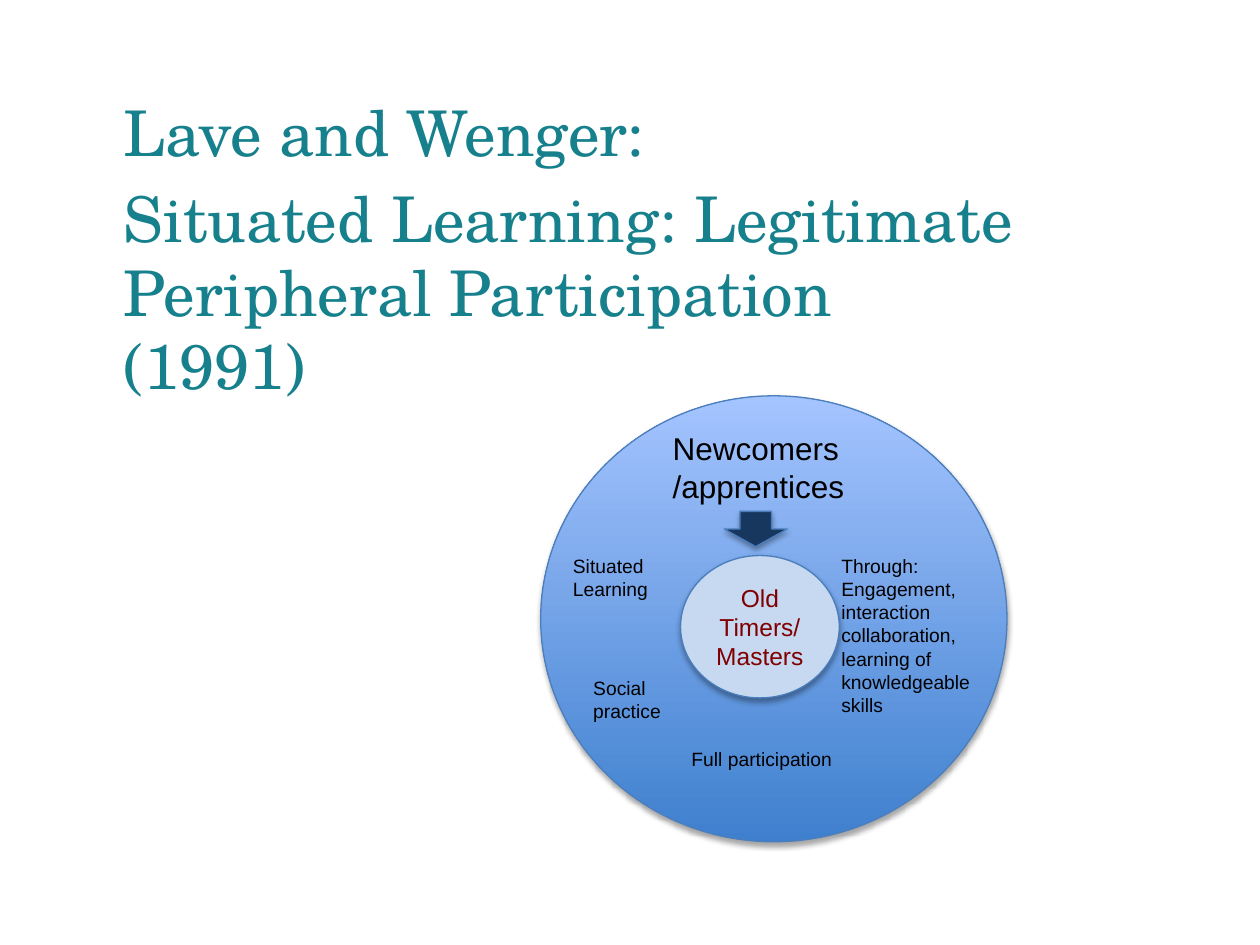
"""Build a slide on situated learning with a diagram of peripheral participation."""
from dataclasses import dataclass

import lxml.etree
import pptx
import pptx.dml.color
import pptx.enum.shapes
import pptx.enum.text
import pptx.oxml.ns
import pptx.util

Cm = pptx.util.Cm
RGBColor = pptx.dml.color.RGBColor
Geometry = pptx.enum.shapes.MSO_SHAPE
Align = pptx.enum.text.PP_ALIGN
Anchor = pptx.enum.text.MSO_ANCHOR
AutoSize = pptx.enum.text.MSO_AUTO_SIZE

TEAL = RGBColor(0x16, 0x81, 0x8D)
DEEP_BLUE = RGBColor(0x3F, 0x80, 0xCE)
LIGHT_BLUE = RGBColor(0xA4, 0xC4, 0xFF)
PALE_BLUE = RGBColor(0xC6, 0xD9, 0xF1)
NAVY = RGBColor(0x17, 0x37, 0x5E)
OUTLINE = RGBColor(0x4B, 0x7E, 0xBC)
MAROON = RGBColor(0x80, 0x00, 0x00)
BLACK = RGBColor(0x00, 0x00, 0x00)


@dataclass(frozen=True)
class Box:
    left: float
    top: float
    width: float
    height: float

    def lengths(self) -> tuple:
        return Cm(self.left), Cm(self.top), Cm(self.width), Cm(self.height)


@dataclass(frozen=True)
class Label:
    text: str
    box: Box
    size: int = 11


@dataclass(frozen=True)
class Figure:
    geometry: Geometry
    box: Box
    colors: tuple
    text: str = ""


TITLE = "Lave and Wenger:\nSituated Learning: Legitimate Peripheral Participation (1991)"
TITLE_BOX = Box(2.49, 1.93, 18.11, 1.8)

FIGURES = (
    Figure(Geometry.OVAL, Box(10.9, 7.98, 9.4, 8.99), (DEEP_BLUE, LIGHT_BLUE)),
    Figure(Geometry.OVAL, Box(13.72, 11.2, 3.2, 2.87), (PALE_BLUE,), "Old Timers/\nMasters"),
    Figure(Geometry.DOWN_ARROW, Box(14.6, 10.31, 1.27, 0.71), (NAVY,)),
)

LABELS = (
    Label("Newcomers/apprentices", Box(13.31, 8.53, 3.99, 1.8), 18),
    Label(
        "Through:\nEngagement, interaction collaboration, learning of knowledgeable skills",
        Box(16.71, 11.05, 3.18, 3.56),
    ),
    Label("Full participation", Box(13.69, 14.94, 4.29, 0.74)),
    Label("Social practice", Box(11.71, 13.51, 2.21, 1.19)),
    Label("Situated Learning", Box(11.3, 11.05, 2.39, 1.19)),
)


def write_text(frame, text: str, *, size: float, color: RGBColor = BLACK, font: str = "Arial",
               align=Align.LEFT, anchor=Anchor.TOP, auto_size=AutoSize.NONE,
               line_spacing: float = 0, space_before: float = 0) -> None:
    frame.word_wrap = True
    frame.auto_size = auto_size
    frame.vertical_anchor = anchor
    frame.text = text
    for index, paragraph in enumerate(frame.paragraphs):
        paragraph.alignment = align
        if line_spacing:
            paragraph.line_spacing = pptx.util.Pt(line_spacing)
        if index and space_before:
            paragraph.space_before = pptx.util.Pt(space_before)
        for run in paragraph.runs:
            run.font.name = font
            run.font.size = pptx.util.Pt(size)
            run.font.color.rgb = color


def add_soft_shadow(shape) -> None:
    shape.shadow.inherit = False
    qn = pptx.oxml.ns.qn
    effects = shape.element.spPr.find(qn("a:effectLst"))
    shadow = lxml.etree.SubElement(effects, qn("a:outerShdw"), blurRad="40000",
                                   dist="23000", dir="5400000", rotWithShape="0")
    shade = lxml.etree.SubElement(shadow, qn("a:srgbClr"), val=str(BLACK))
    lxml.etree.SubElement(shade, qn("a:alpha"), val="35000")


def add_figure(slide, figure: Figure) -> None:
    shape = slide.shapes.add_shape(figure.geometry, *figure.box.lengths())
    if len(figure.colors) > 1:
        shape.fill.gradient()
        shape.fill.gradient_angle = 90
        for stop, color in zip(shape.fill.gradient_stops, figure.colors):
            stop.color.rgb = color
    else:
        shape.fill.solid()
        shape.fill.fore_color.rgb = figure.colors[0]
    shape.line.color.rgb = OUTLINE
    shape.line.width = pptx.util.Pt(0.75)
    add_soft_shadow(shape)
    if figure.text:
        write_text(shape.text_frame, figure.text, size=14, color=MAROON,
                   align=Align.CENTER, anchor=Anchor.MIDDLE)


def add_label(slide, label: Label) -> None:
    box = slide.shapes.add_textbox(*label.box.lengths())
    write_text(box.text_frame, label.text, size=label.size, auto_size=AutoSize.SHAPE_TO_FIT_TEXT)


def add_title(slide) -> None:
    title = slide.shapes.title
    title.left, title.top, title.width, title.height = TITLE_BOX.lengths()
    frame = title.text_frame
    frame.margin_left = frame.margin_top = frame.margin_right = frame.margin_bottom = 0
    write_text(frame, TITLE, size=36, color=TEAL, font="TeX Gyre Schola",
               line_spacing=42, space_before=7.2)


def main() -> None:
    presentation = pptx.Presentation()
    presentation.slide_width, presentation.slide_height = Cm(25.4), Cm(19.05)
    slide = presentation.slides.add_slide(presentation.slide_layouts.get_by_name("Title Only"))
    add_title(slide)
    for figure in FIGURES:
        add_figure(slide, figure)
    for label in LABELS:
        add_label(slide, label)
    presentation.save("out.pptx")


if __name__ == "__main__":
    main()
